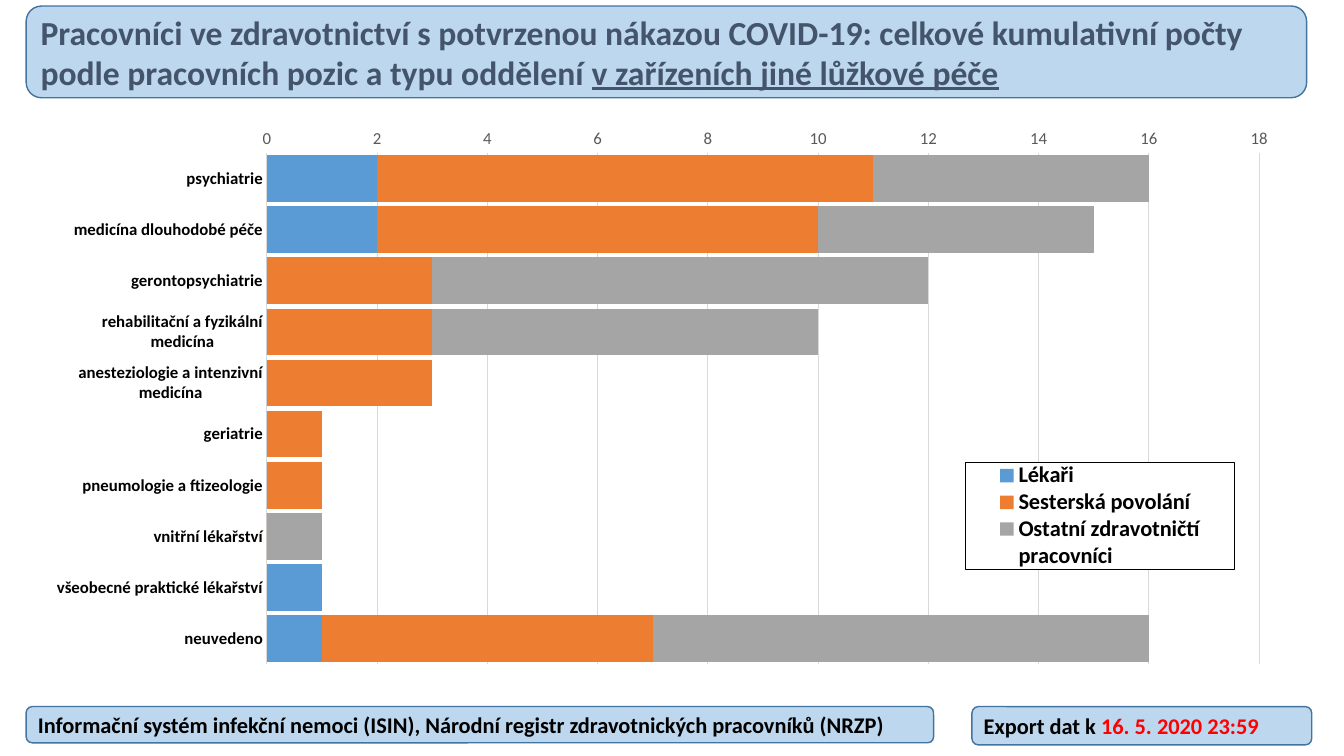
from dataclasses import dataclass

from lxml import etree
from pptx import Presentation
from pptx.chart.data import CategoryChartData
from pptx.dml.color import RGBColor
from pptx.enum import chart as charts, shapes, text
from pptx.oxml import ns, parse_xml
from pptx.util import Inches, Pt


@dataclass(frozen=True)
class Theme:
    font: str = "Calibri"
    panel: str = "BDD7EE"
    border: str = "43739E"
    title: str = "44546A"
    ink: str = "000000"
    alert: str = "FF0000"
    grid: str = "D9D9D9"
    axis: str = "595959"
    title_size: int = 24
    note_size: int = 16
    axis_size: int = 12


THEME = Theme()

DEPARTMENTS = [
    "psychiatrie", "medicína dlouhodobé péče", "gerontopsychiatrie",
    "rehabilitační a fyzikální medicína", "anesteziologie a intenzivní medicína",
    "geriatrie", "pneumologie a ftizeologie", "vnitřní lékařství",
    "všeobecné praktické lékařství", "neuvedeno",
]
# Name, colour and counts for each staff group
STAFF = [
    ("Lékaři", "5B9BD5", [2, 2, 0, 0, 0, 0, 0, 0, 1, 1]),
    ("Sesterská povolání", "ED7D31", [9, 8, 3, 3, 3, 1, 1, 0, 0, 6]),
    ("Ostatní zdravotničtí pracovníci", "A5A5A5", [5, 5, 9, 7, 0, 0, 0, 1, 0, 9]),
]


def rgb(value):
    return RGBColor.from_string(value)


def style_font(font, size, color, bold=False):
    font.name = THEME.font
    font.size = Pt(size)
    font.bold = bold
    font.color.rgb = rgb(color)


def add_panel(page, left, top, width, height, parts, size, color):
    """Add a rounded panel; parts are (text, colour or None, underline)."""
    box = page.shapes.add_shape(
        shapes.MSO_SHAPE.ROUNDED_RECTANGLE,
        Inches(left), Inches(top), Inches(width), Inches(height))
    box.shadow.inherit = False
    box.fill.solid()
    box.fill.fore_color.rgb = rgb(THEME.panel)
    box.line.color.rgb = rgb(THEME.border)
    box.line.width = Pt(1)
    frame = box.text_frame
    frame.word_wrap = True
    frame.vertical_anchor = text.MSO_ANCHOR.MIDDLE
    para = frame.paragraphs[0]
    para.alignment = text.PP_ALIGN.LEFT
    style_font(para.font, size, color, bold=True)
    for words, accent, underline in parts:
        span = para.add_run()
        span.text = words
        # Shape style makes text white, so each run carries its colour
        span.font.color.rgb = rgb(accent or color)
        if underline:
            span.font.underline = True


def make_layout(x, y, width, height, inner=False):
    """Build a manual chart layout from fractions of the chart area."""
    layout = etree.Element(ns.qn("c:layout"))
    manual = etree.SubElement(layout, ns.qn("c:manualLayout"))
    settings = [("layoutTarget", "inner")] if inner else []
    settings += [("xMode", "edge"), ("yMode", "edge"),
                 ("x", x), ("y", y), ("w", width), ("h", height)]
    for tag, value in settings:
        etree.SubElement(manual, ns.qn(f"c:{tag}")).set("val", str(value))
    return layout


def place(element, layout, index):
    for old in element.findall(ns.qn("c:layout")):
        element.remove(old)
    element.insert(index, layout)


def style_axes(chart):
    departments = chart.category_axis
    departments.reverse_order = True
    departments.format.line.color.rgb = rgb(THEME.grid)
    departments.format.line.width = Pt(0.75)
    style_font(departments.tick_labels.font, THEME.axis_size, THEME.ink, bold=True)

    counts = chart.value_axis
    counts.minimum_scale, counts.maximum_scale, counts.major_unit = 0, 18, 2
    counts.format.line.fill.background()
    counts.has_major_gridlines = True
    counts.major_gridlines.format.line.color.rgb = rgb(THEME.grid)
    counts.major_gridlines.format.line.width = Pt(0.75)
    style_font(counts.tick_labels.font, THEME.axis_size, THEME.axis)

    for axis in (departments, counts):
        axis.major_tick_mark = charts.XL_TICK_MARK.NONE
        axis.minor_tick_mark = charts.XL_TICK_MARK.NONE


def style_legend(chart):
    chart.has_legend = True
    legend = chart.legend
    legend.position = charts.XL_LEGEND_POSITION.RIGHT
    legend.include_in_layout = False
    style_font(legend.font, THEME.note_size, THEME.ink, bold=True)
    place(legend._element, make_layout(0.75, 0.59, 0.22, 0.19), 1)
    frame = parse_xml(
        f'<c:spPr {ns.nsdecls("c", "a")}>'
        '<a:solidFill><a:srgbClr val="FFFFFF"/></a:solidFill>'
        f'<a:ln w="9525"><a:solidFill><a:srgbClr val="{THEME.ink}"/></a:solidFill></a:ln>'
        '</c:spPr>')
    legend._element.find(ns.qn("c:txPr")).addprevious(frame)


def add_staff_chart(page):
    data = CategoryChartData(number_format="General")
    data.categories = DEPARTMENTS
    for name, _, counts in STAFF:
        data.add_series(name, counts)
    chart = page.shapes.add_chart(
        charts.XL_CHART_TYPE.BAR_STACKED, Inches(0.46), Inches(1.28),
        Inches(12.15), Inches(5.59), data).chart
    chart.has_title = False
    style_font(chart.font, 10, THEME.ink)

    plot = chart.plots[0]
    plot.gap_width = 10
    plot.overlap = 100
    plot.vary_by_categories = False
    for series, (_, color, _) in zip(plot.series, STAFF):
        series.format.fill.solid()
        series.format.fill.fore_color.rgb = rgb(color)

    style_axes(chart)
    style_legend(chart)
    plot_area = chart._chartSpace.find(f".//{ns.qn('c:plotArea')}")
    place(plot_area, make_layout(0.18, 0.04, 0.81, 0.91, inner=True), 0)


def main():
    deck = Presentation()
    deck.slide_width, deck.slide_height = Inches(13.33), Inches(7.5)
    page = deck.slides.add_slide(deck.slide_layouts[6])

    # Source note
    add_panel(page, 0.26, 7.01, 9, 0.36, [
        ("Informační systém infekční nemoci (ISIN), "
         "Národní registr zdravotnických pracovníků (NRZP)", None, False),
    ], THEME.note_size, THEME.ink)

    # Title
    add_panel(page, 0.26, 0.06, 12.7, 0.91, [
        ("Pracovníci ve zdravotnictví s potvrzenou nákazou COVID-19: celkové "
         "kumulativní počty podle pracovních pozic a typu oddělení ", None, False),
        ("v zařízeních jiné lůžkové péče", None, True),
    ], THEME.title_size, THEME.title)

    # Export date
    add_panel(page, 9.64, 7.01, 3.37, 0.38, [
        ("Export dat k ", None, False),
        ("16. 5. 2020 23:59", THEME.alert, False),
    ], THEME.note_size, THEME.ink)

    # Counts by department and staff group
    add_staff_chart(page)
    deck.save("out.pptx")


if __name__ == "__main__":
    main()
